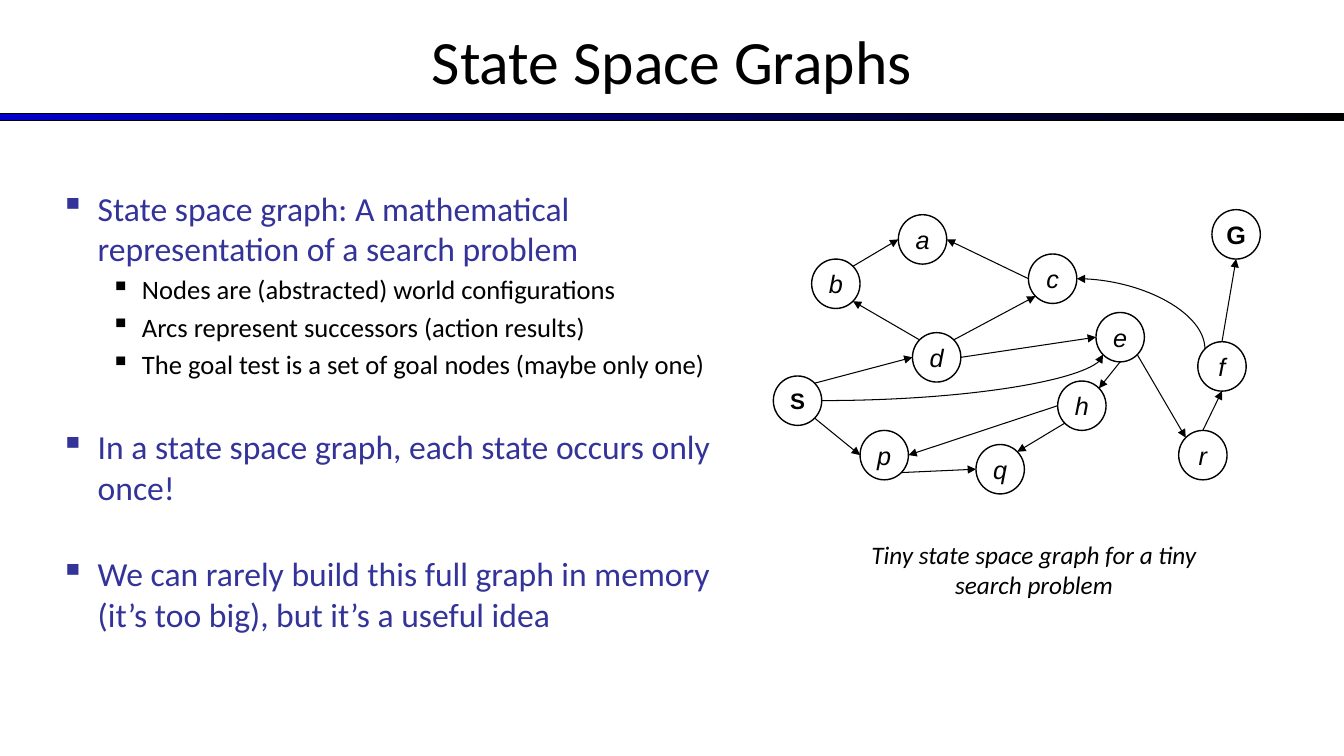
import math
from dataclasses import dataclass

from lxml import etree
from pptx import Presentation
from pptx.dml.color import RGBColor
from pptx.enum.shapes import MSO_CONNECTOR, MSO_SHAPE
from pptx.enum.text import MSO_ANCHOR, PP_ALIGN
from pptx.oxml.ns import qn
from pptx.util import Inches, Pt

RECTANGLE = MSO_SHAPE.RECTANGLE
NODE_SHAPE = MSO_SHAPE.FLOWCHART_CONNECTOR
STRAIGHT, CURVE = MSO_CONNECTOR.STRAIGHT, MSO_CONNECTOR.CURVE
CENTER, LEFT = PP_ALIGN.CENTER, PP_ALIGN.LEFT
TOP, MIDDLE = MSO_ANCHOR.TOP, MSO_ANCHOR.MIDDLE


@dataclass(frozen=True)
class Theme:
    black: RGBColor = RGBColor(0x00, 0x00, 0x00)
    accent: RGBColor = RGBColor(0x33, 0x33, 0x99)
    bar_start: RGBColor = RGBColor(0x00, 0x00, 0xCC)
    text_font: str = "Calibri"
    node_font: str = "Arial"
    title_size: int = 44
    point_size: int = 24
    detail_size: int = 19
    caption_size: int = 18
    node_size: int = 18
    start_size: int = 16


THEME = Theme()

# (level, text, space before in points)
POINTS = [
    (0, "State space graph: A mathematical representation of a search problem", 0),
    (1, "Nodes are (abstracted) world configurations", 3.8),
    (1, "Arcs represent successors (action results)", 3.8),
    (1, "The goal test is a set of goal nodes (maybe only one)", 3.8),
    (0, "In a state space graph, each state occurs only once!", 33.2),
    (0, "We can rarely build this full graph in memory (it’s too big), but it’s a useful idea", 33.2),
]
# Text indent and bullet hang by level, in inches
INDENTS = [(0.37, 0.37), (0.81, 0.31)]

NODE_WIDTH, NODE_HEIGHT = 0.48, 0.49
# Left and top of each node, in inches from the corner of the graph
NODES = {
    "S": (0, 1.65), "G": (4.35, 0), "d": (1.38, 1.22), "b": (0.38, 0.49),
    "p": (0.86, 2.19), "q": (2.01, 2.33), "c": (2.53, 0.44), "e": (3.2, 1.02),
    "h": (2.82, 1.7), "a": (1.24, 0.05), "f": (4.21, 1.31), "r": (4.02, 2.19),
}
# Compass directions on a node, in degrees clockwise from east
SITES = {"E": 0, "SE": 45, "S": 90, "SW": 135, "W": 180, "NW": 225, "N": 270, "NE": 315}
STRAIGHT_ARCS = [
    ("S", "SE", "p", "W"), ("p", "SE", "q", "W"), ("h", "SW", "q", "NE"),
    ("h", "W", "p", "E"), ("e", "S", "h", "NE"), ("e", "SE", "r", "NW"),
    ("r", "N", "f", "S"), ("f", "N", "G", "S"), ("S", "NE", "d", "W"),
    ("d", "NW", "b", "SE"), ("b", "NE", "a", "W"), ("c", "W", "a", "E"),
    ("d", "NE", "c", "SW"), ("d", "E", "e", "W"),
]
# Curves leave their first node horizontally; the last item is the arrowed end
CURVED_ARCS = [("c", "E", "f", "NW", "headEnd"), ("S", "E", "e", "SW", "tailEnd")]


def format_text(paragraph, size, color, font=THEME.text_font, align=CENTER, bold=False, italic=False):
    paragraph.alignment = align
    for run in paragraph.runs:
        run.font.name = font
        run.font.size = Pt(size)
        run.font.color.rgb = color
        run.font.bold = bold
        run.font.italic = italic


def add_text_box(slide, box, anchor=TOP):
    text_frame = slide.shapes.add_textbox(*map(Inches, box)).text_frame
    text_frame.word_wrap = True
    text_frame.vertical_anchor = anchor
    return text_frame


def add_bullet(paragraph, level, color):
    indent, hang = INDENTS[level]
    properties = paragraph._p.get_or_add_pPr()
    properties.set("marL", str(Inches(indent)))
    properties.set("indent", str(-Inches(hang)))
    bullet_color = etree.SubElement(properties, qn("a:buClr"))
    etree.SubElement(bullet_color, qn("a:srgbClr")).set("val", str(color))
    etree.SubElement(properties, qn("a:buChar")).set("char", "▪")


def add_title(slide, box):
    paragraph = add_text_box(slide, box, MIDDLE).paragraphs[0]
    paragraph.text = "State Space Graphs"
    format_text(paragraph, THEME.title_size, THEME.black)


def add_title_bar(slide, box):
    bar = slide.shapes.add_shape(RECTANGLE, *map(Inches, box))
    bar.shadow.inherit = False
    bar.fill.gradient()
    bar.fill.gradient_angle = 0
    for stop, color in zip(bar.fill.gradient_stops, (THEME.bar_start, THEME.black)):
        stop.color.rgb = color
    bar.line.color.rgb = THEME.black
    bar.line.width = Pt(0.75)


def add_points(slide, box):
    text_frame = add_text_box(slide, box)
    for index, (level, text, space_before) in enumerate(POINTS):
        paragraph = text_frame.add_paragraph() if index else text_frame.paragraphs[0]
        paragraph.text = text
        paragraph.level = level
        paragraph.space_before = Pt(space_before)
        color = THEME.black if level else THEME.accent
        size = THEME.detail_size if level else THEME.point_size
        format_text(paragraph, size, color, align=LEFT)
        add_bullet(paragraph, level, color)


def add_node(group, name, left, top):
    node = group.shapes.add_shape(NODE_SHAPE, *map(Inches, (left, top, NODE_WIDTH, NODE_HEIGHT)))
    node.shadow.inherit = False
    node.fill.background()
    node.line.color.rgb = THEME.black
    node.line.width = Pt(1)
    node.text_frame.word_wrap = False
    node.text_frame.vertical_anchor = MIDDLE
    paragraph = node.text_frame.paragraphs[0]
    paragraph.text = name
    size = THEME.start_size if name == "S" else THEME.node_size
    is_terminal = name in ("S", "G")
    format_text(paragraph, size, THEME.black, THEME.node_font, bold=is_terminal, italic=not is_terminal)


def site_point(node, site, left, top):
    """Return the point on the node's outline in a compass direction."""
    angle = math.radians(SITES[site])
    x, y = NODES[node]
    return (Inches(left + x + NODE_WIDTH / 2 * (1 + math.cos(angle))),
            Inches(top + y + NODE_HEIGHT / 2 * (1 + math.sin(angle))))


def add_arc(group, kind, begin, end, arrow_end="tailEnd"):
    arc = group.shapes.add_connector(kind, *begin, *end)
    arc.line.color.rgb = THEME.black
    arc.line.width = Pt(0.75)
    properties = arc._element.spPr
    if kind == CURVE:
        properties.find(qn("a:prstGeom")).set("prst", "curvedConnector2")
    arrow = etree.SubElement(properties.find(qn("a:ln")), qn(f"a:{arrow_end}"))
    arrow.set("type", "triangle")
    arrow.set("w", "med")
    arrow.set("len", "med")
    etree.SubElement(properties, qn("a:effectLst"))


def add_graph(slide, left, top):
    group = slide.shapes.add_group_shape()
    for name, (x, y) in NODES.items():
        add_node(group, name, left + x, top + y)
    for kind, arcs in ((STRAIGHT, STRAIGHT_ARCS), (CURVE, CURVED_ARCS)):
        for source, source_site, target, target_site, *arrow_end in arcs:
            begin = site_point(source, source_site, left, top)
            end = site_point(target, target_site, left, top)
            add_arc(group, kind, begin, end, *arrow_end)


def add_caption(slide, box):
    paragraph = add_text_box(slide, box).paragraphs[0]
    paragraph.text = "Tiny state space graph for a tiny search problem"
    format_text(paragraph, THEME.caption_size, THEME.black, italic=True)


def main():
    presentation = Presentation()
    presentation.slide_width = Inches(13.33)
    presentation.slide_height = Inches(7.5)
    slide = presentation.slides.add_slide(presentation.slide_layouts[6])
    add_title_bar(slide, (0, 1.13, 13.33, 0.07))
    add_title(slide, (0, -0.03, 13.33, 1.25))
    add_points(slide, (0.5, 1.81, 6.92, 4.95))
    add_graph(slide, 7.67, 2.08)
    add_caption(slide, (8.42, 5.3, 3.67, 0.71))
    presentation.save("out.pptx")


if __name__ == "__main__":
    main()
